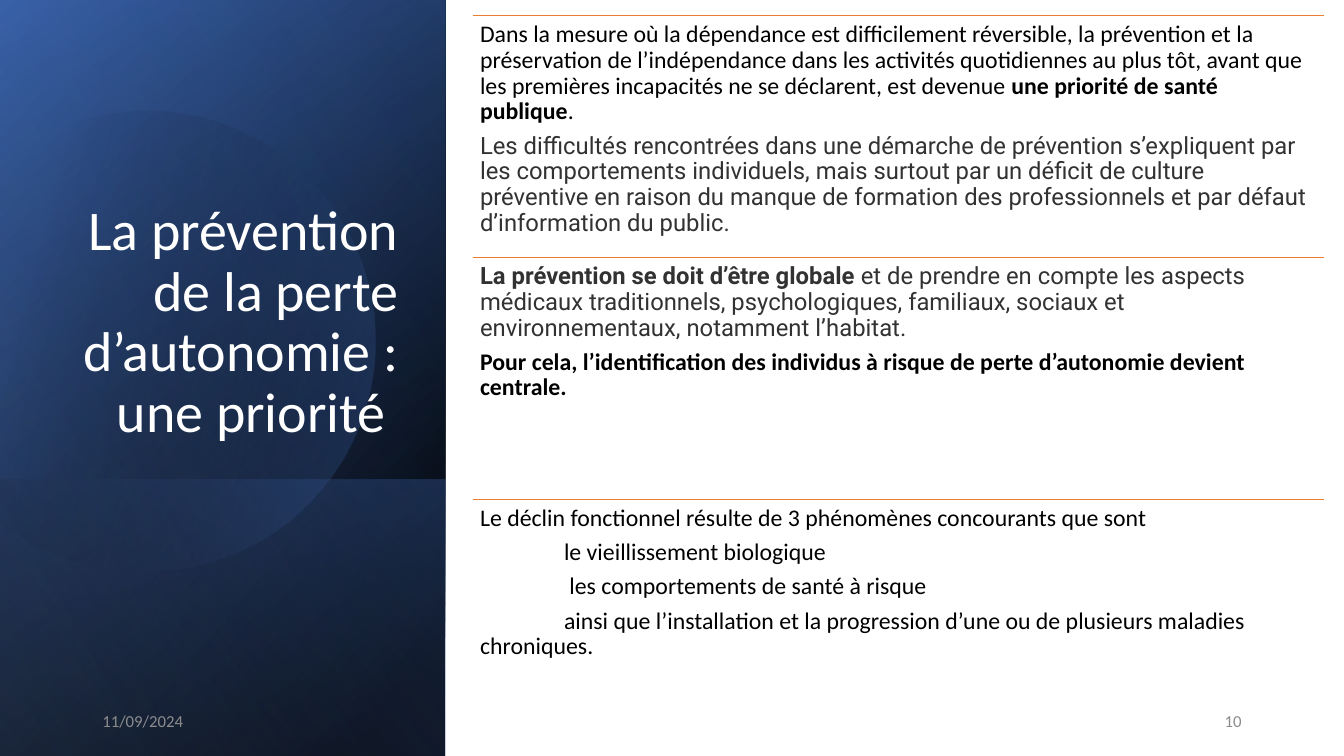
from dataclasses import dataclass
from math import cos, radians, sin

from lxml.etree import SubElement
from pptx import Presentation
from pptx.dml.color import RGBColor
from pptx.enum.shapes import MSO_CONNECTOR as Connector, MSO_SHAPE as Shape
from pptx.enum.text import MSO_ANCHOR as Anchor, PP_ALIGN as Align
from pptx.oxml.ns import qn
from pptx.util import Inches, Pt

COLS, ROWS = 160, 90
CELL = Inches(7.5) / ROWS
PANEL_WIDTH = 53
SECTION_LEFT, SECTION_TOP, SECTION_WIDTH, SECTION_ROWS = 56.3, 1.8, 101.3, 28.8
FOOTER_TOP, FOOTER_WIDTH, FOOTER_ROWS = 83.4, 36, 4.8


@dataclass(frozen=True)
class Stop:
    position: int
    color: str
    opacity: int = 100


@dataclass(frozen=True)
class Layer:
    start: Stop
    end: Stop
    angle: int
    top: float = 0
    rows: float = ROWS


@dataclass(frozen=True)
class Run:
    text: str
    font: str = "Calibri"
    color: str = "000000"
    bold: bool = False


@dataclass(frozen=True)
class Para:
    runs: tuple[Run, ...]
    indent: float = 0


@dataclass(frozen=True)
class Box:
    left: float
    top: float
    width: float
    height: float


DARK_LAYERS = (
    Layer(Stop(8, "000000"), Stop(100, "2F5597"), 50),
    Layer(Stop(0, "000000", 0), Stop(99, "4472C4", 46), 30),
    Layer(Stop(2, "4472C4", 29), Stop(100, "000000", 30), 130, 57.1, 32.9),
)
TOP_LAYER = Layer(Stop(0, "000000", 0), Stop(99, "8FAADC", 11), 120)
DISC_LAYER = Layer(Stop(29, "000000", 0), Stop(100, "4472C4", 43), 30)
DISC_CENTER, DISC_ROTATION = (19, 40.1), 343.9
DISC_START = (17.9, 13.2)
DISC_EDGES = (
    ((29.5, 13.4), (40.2, 21.2), (43.6, 33)),
    ((47.8, 47.6), (39.4, 62.8), (24.8, 67)),
    ((15.7, 69.6), (6.4, 67.3), (-0.4, 61.7)),
    ((-1.8, 60.4),),
    ((-1.8, 21),),
    ((0, 19.3),),
    ((2.8, 17), (6, 15.4), (9.6, 14.3)),
    ((12.4, 13.6), (15.1, 13.2), DISC_START),
)

SECTIONS = (
    (
        Para((
            Run("Dans la mesure où la dépendance est difficilement réversible, la prévention et la "
                "préservation de l’indépendance dans les activités quotidiennes au plus tôt, avant que "
                "les premières incapacités ne se déclarent, est devenue "),
            Run("une priorité de santé publique", bold=True),
            Run("."),
        )),
        Para((
            Run("Les difficultés rencontrées dans une démarche de prévention s’expliquent par les "
                "comportements individuels, mais surtout par un déficit de culture préventive en raison "
                "du manque de formation des professionnels et par défaut d’information du public.",
                "Roboto", "323232"),
        )),
    ),
    (
        Para((
            Run("La prévention se doit d’être globale", "Roboto", "323232", True),
            Run(" et de prendre en compte les aspects médicaux traditionnels, psychologiques, "
                "familiaux, sociaux et environnementaux, notamment l’habitat.", "Roboto", "323232"),
        )),
        Para((
            Run("Pour cela, l’identification des individus à risque de perte d’autonomie devient "
                "centrale.", bold=True),
        )),
    ),
    (
        Para((Run("Le déclin fonctionnel résulte de 3 phénomènes concourants que sont"),)),
        Para((Run("le vieillissement biologique"),), 10),
        Para((Run(" les comportements de santé à risque"),), 10),
        Para((Run("ainsi que l’installation et la progression d’une ou de plusieurs maladies "
                  "chroniques."),), 10),
    ),
)


def cells(count: float) -> int:
    return round(count * CELL)


def rgb(color: str) -> RGBColor:
    return RGBColor.from_string(color)


def apply_gradient(shape, layer: Layer) -> None:
    shape.shadow.inherit = False
    shape.line.fill.background()
    shape.fill.background()
    properties = shape._element.spPr
    empty_fill = properties.find(qn("a:noFill"))
    gradient = SubElement(properties, qn("a:gradFill"), rotWithShape="1")
    properties.replace(empty_fill, gradient)
    stops = SubElement(gradient, qn("a:gsLst"))
    for stop in (layer.start, layer.end):
        mark = SubElement(stops, qn("a:gs"), pos=str(stop.position * 1000))
        color = SubElement(mark, qn("a:srgbClr"), val=stop.color)
        if stop.opacity < 100:
            SubElement(color, qn("a:alpha"), val=str(stop.opacity * 1000))
    SubElement(gradient, qn("a:lin"), ang=str(layer.angle * 60000), scaled="0")


def add_layer(slide, layer: Layer) -> None:
    shift = (PANEL_WIDTH - layer.rows) / 2
    panel = slide.shapes.add_shape(Shape.RECTANGLE, cells(shift), cells(layer.top - shift),
                                   cells(layer.rows), cells(PANEL_WIDTH))
    panel.rotation = 90
    panel._element.spPr.get_or_add_xfrm().set("flipH", "1")
    apply_gradient(panel, layer)


def curve(start, first, second, end, steps: int = 24) -> list:
    points = []
    for step in range(1, steps + 1):
        t = step / steps
        weights = ((1 - t) ** 3, 3 * t * (1 - t) ** 2, 3 * t * t * (1 - t), t ** 3)
        points.append(tuple(sum(w * v for w, v in zip(weights, axis))
                            for axis in zip(start, first, second, end)))
    return points


def unrotate(point) -> tuple[int, int]:
    turn = radians(-DISC_ROTATION)
    dx, dy = (value - center for value, center in zip(point, DISC_CENTER))
    return (cells(DISC_CENTER[0] + dx * cos(turn) - dy * sin(turn)),
            cells(DISC_CENTER[1] + dx * sin(turn) + dy * cos(turn)))


def add_disc(slide) -> None:
    outline = [DISC_START]
    for edge in DISC_EDGES:
        outline += curve(outline[-1], *edge) if len(edge) == 3 else edge
    corners = [unrotate(point) for point in outline]
    builder = slide.shapes.build_freeform(*corners[0])
    builder.add_line_segments(corners[1:], close=True)
    disc = builder.convert_to_shape()
    disc.rotation = DISC_ROTATION
    apply_gradient(disc, DISC_LAYER)


def add_text(slide, box: Box, paras: tuple[Para, ...], *, size: float, align=Align.LEFT,
             anchor=Anchor.TOP, spacing: float = 1, after: float = 0, inset: float | None = None) -> None:
    frame = slide.shapes.add_textbox(cells(box.left), cells(box.top),
                                     cells(box.width), cells(box.height)).text_frame
    frame.word_wrap = True
    frame.vertical_anchor = anchor
    if inset is not None:
        frame.margin_left = frame.margin_right = frame.margin_top = frame.margin_bottom = cells(inset)
    for index, para in enumerate(paras):
        line = frame.add_paragraph() if index else frame.paragraphs[0]
        line.alignment, line.line_spacing, line.space_after = align, spacing, Pt(after)
        if para.indent:
            line._p.get_or_add_pPr().set("indent", str(cells(para.indent)))
        for run in para.runs:
            piece = line.add_run()
            piece.text = run.text
            font = piece.font
            font.name, font.size, font.bold = run.font, Pt(size), run.bold
            font.color.rgb = rgb(run.color)


def add_rule(slide, top: float) -> None:
    rule = slide.shapes.add_connector(Connector.STRAIGHT, cells(SECTION_LEFT), cells(top),
                                      cells(SECTION_LEFT + SECTION_WIDTH), cells(top))
    rule.line.color.rgb = rgb("ED7D31")
    rule.line.width = Pt(0.5)
    SubElement(rule._element.spPr, qn("a:effectLst"))


def main() -> None:
    deck = Presentation()
    deck.slide_width, deck.slide_height = cells(COLS), cells(ROWS)
    slide = deck.slides.add_slide(deck.slide_layouts[6])
    for layer in DARK_LAYERS:
        add_layer(slide, layer)
    add_disc(slide)
    add_layer(slide, TOP_LAYER)
    title = Run("La prévention de la perte d’autonomie : une priorité ", color="FFFFFF")
    add_text(slide, Box(7.7, 22.1, 40.9, 31.4), (Para((title,)),), size=40,
             align=Align.RIGHT, anchor=Anchor.BOTTOM, spacing=0.9)
    for index, section in enumerate(SECTIONS):
        top = SECTION_TOP + index * SECTION_ROWS
        add_rule(slide, top)
        add_text(slide, Box(SECTION_LEFT, top, SECTION_WIDTH, SECTION_ROWS), section,
                 size=17, spacing=0.9, after=6, inset=0.85)
    for text, left, align in (("11/09/2024", 11, Align.LEFT), ("10", 113, Align.RIGHT)):
        add_text(slide, Box(left, FOOTER_TOP, FOOTER_WIDTH, FOOTER_ROWS),
                 (Para((Run(text, color="8C8C8C"),)),), size=12, align=align, anchor=Anchor.MIDDLE)
    deck.save("out.pptx")


if __name__ == "__main__":
    main()
